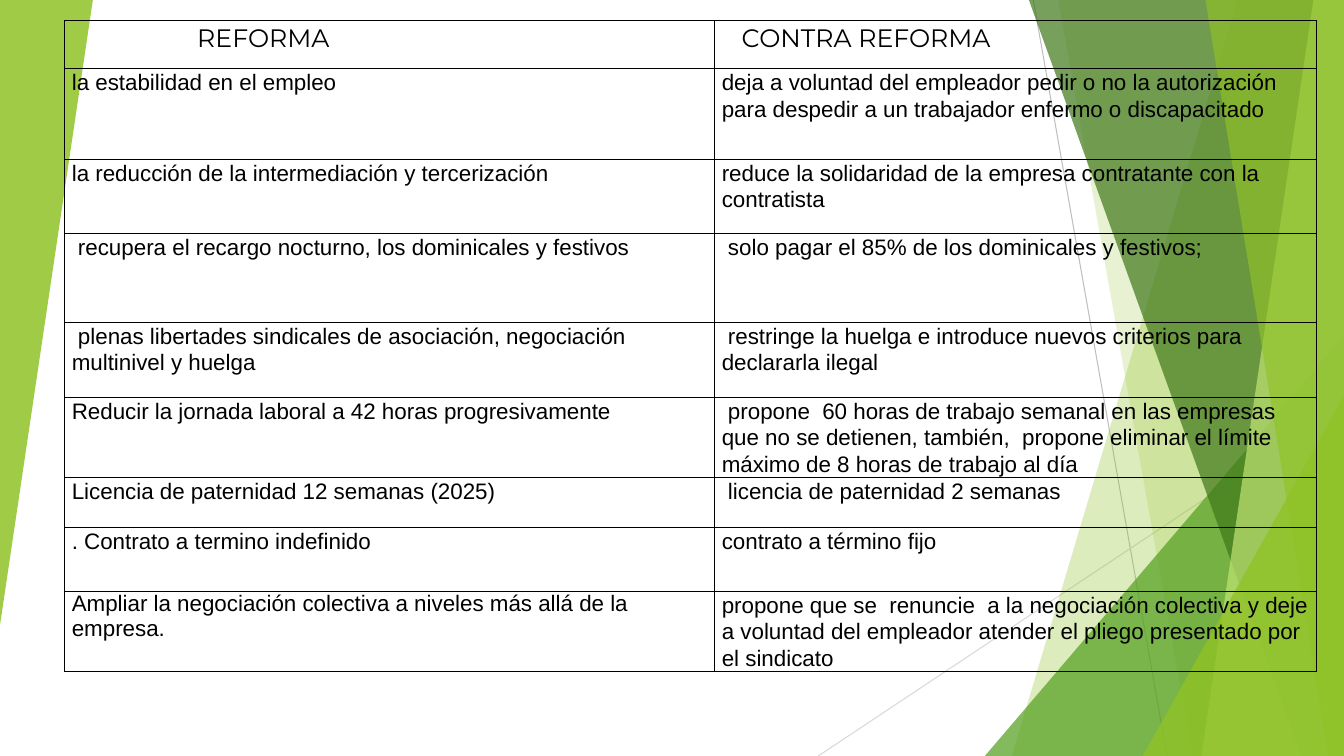
"""Builds a slide comparing the labour reform with its counter-reform."""
from dataclasses import dataclass

from lxml.etree import SubElement
from pptx import Presentation
from pptx.dml.color import RGBColor as Rgb
from pptx.enum.shapes import MSO_CONNECTOR as Connector, MSO_SHAPE as Preset
from pptx.oxml.ns import qn
from pptx.slide import Slide
from pptx.util import Cm, Pt

WIDTH, HEIGHT = 33.87, 19.05
COLORS = {
    "black": "000000", "gray": "BFBFBF", "pale gray": "D9D9D9", "lime": "90C226",
    "green": "54A021", "dark green": "3F7819", "light lime": "C0E474",
}
COLUMNS = [16.38, 15.16]
ROWS = [1.21, 2.29, 1.86, 2.24, 1.89, 2.02, 1.26, 1.61, 2.02]
HEADER = ["REFORMA", "CONTRA REFORMA"]
HEADER_INDENTS = [3.16, 0.5]
PROPOSALS = [
    ("la estabilidad en el empleo",
     "deja a voluntad del empleador pedir o no la autorización para despedir a un trabajador enfermo o discapacitado"),
    ("la reducción de la intermediación y tercerización",
     "reduce la solidaridad de la empresa contratante con la contratista"),
    (" recupera el recargo nocturno, los dominicales y festivos",
     " solo pagar el 85% de los dominicales y festivos;"),
    (" plenas libertades sindicales de asociación, negociación multinivel y huelga",
     " restringe la huelga e introduce nuevos criterios para declararla ilegal"),
    ("Reducir la jornada laboral a 42 horas progresivamente",
     " propone  60 horas de trabajo semanal en las empresas que no se detienen, también,  propone eliminar el límite máximo de 8 horas de trabajo al día"),
    ("Licencia de paternidad 12 semanas (2025)", " licencia de paternidad 2 semanas"),
    (". Contrato a termino indefinido", "contrato a término fijo"),
    ("Ampliar la negociación colectiva a niveles más allá de la empresa.",
     "propone que se  renuncie  a la negociación colectiva y deje a voluntad del empleador atender el pliego presentado por el sindicato"),
]


@dataclass
class Painter:
    """Draws styled elements on one page."""
    page: Slide
    colors: dict
    body_font: str = "Arial"
    header_font: str = "Montserrat"

    def color(self, name):
        return Rgb.from_string(self.colors[name])

    def line(self, start, end, color):
        line = self.page.shapes.add_connector(
            Connector.STRAIGHT, *(Cm(value) for value in (*start, *end)))
        line.line.color.rgb = self.color(color)
        line.line.width = Pt(0.75)
        SubElement(line._element.spPr, qn("a:effectLst"))

    def tint(self, shape, color, opacity):
        shape.shadow.inherit = False
        shape.line.fill.background()
        shape.fill.solid()
        shape.fill.fore_color.rgb = self.color(color)
        solid = shape._element.spPr.find(qn("a:solidFill"))
        SubElement(solid[0], qn("a:alpha"), val=str(opacity * 1000))

    def band(self, top_x, bottom_x, color, opacity):
        corners = [(top_x, 0), (WIDTH, 0), (WIDTH, HEIGHT), (bottom_x, HEIGHT)]
        points = [(Cm(x), Cm(y)) for x, y in corners]
        outline = self.page.shapes.build_freeform(*points[0])
        outline.add_line_segments(points[1:], close=True)
        self.tint(outline.convert_to_shape(), color, opacity)

    def triangle(self, left, top, width, height, color, opacity, rotation=0):
        shape = self.page.shapes.add_shape(
            Preset.ISOSCELES_TRIANGLE, Cm(left), Cm(top), Cm(width), Cm(height))
        shape.adjustments[0] = 1
        shape.rotation = rotation
        self.tint(shape, color, opacity)

    def cell(self, cell, text, size, font, indent=0, spacing=1.07):
        cell.margin_left = cell.margin_right = Cm(0.18)
        cell.margin_top = cell.margin_bottom = 0
        para = cell.text_frame.paragraphs[0]
        para.line_spacing = spacing
        para.space_after = Pt(8 if spacing > 1 else 0)
        if indent:
            para._p.get_or_add_pPr().set("marL", str(Cm(indent)))
        span = para.add_run()
        span.text = text
        span.font.size = Pt(size)
        span.font.name = font
        span.font.bold = False
        span.font.color.rgb = self.color("black")
        properties = cell._tc.get_or_add_tcPr()
        for side in ("a:lnL", "a:lnR", "a:lnT", "a:lnB"):
            border = SubElement(properties, qn(side), w=str(Pt(1)))
            solid = SubElement(border, qn("a:solidFill"))
            SubElement(solid, qn("a:srgbClr"), val=self.colors["black"])
        cell.fill.background()

    def table(self, left, top):
        table = self.page.shapes.add_table(
            len(ROWS), len(COLUMNS), Cm(left), Cm(top),
            Cm(sum(COLUMNS)), Cm(sum(ROWS))).table
        table.first_row = table.horz_banding = False
        for column, width in zip(table.columns, COLUMNS):
            column.width = Cm(width)
        for row, height in zip(table.rows, ROWS):
            row.height = Cm(height)
        for index, title in enumerate(HEADER):
            self.cell(table.cell(0, index), title, 18, self.header_font,
                      HEADER_INDENTS[index])
        for row, pair in enumerate(PROPOSALS, 1):
            for column, text in enumerate(pair):
                single = (row, column) == (len(PROPOSALS), 0)
                self.cell(table.cell(row, column), text, 16, self.body_font,
                          spacing=1.0 if single else 1.07)


def main():
    deck = Presentation()
    deck.slide_width, deck.slide_height = Cm(WIDTH), Cm(HEIGHT)
    page = deck.slides.add_slide(deck.slide_layouts[6])
    painter = Painter(page, COLORS)
    painter.line((26.04, 0), (29.41, HEIGHT), "gray")
    painter.line((WIDTH, 10.24), (20.62, HEIGHT), "pale gray")
    painter.band(31.19, 25.5, "lime", 30)
    painter.band(26.67, 30.05, "lime", 20)
    painter.triangle(24.82, 8.46, 9.05, 10.59, "green", 72)
    painter.band(25.93, 32.79, "dark green", 70)
    painter.band(33.1, 30.28, "light lime", 70)
    painter.band(30.38, 33.48, "lime", 65)
    painter.triangle(28.8, 9.98, 5.07, 9.07, "lime", 80)
    painter.triangle(0, 0, 2.34, 15.75, "lime", 85, rotation=180)
    painter.table(1.63, 0.52)
    deck.save("out.pptx")


if __name__ == "__main__":
    main()
